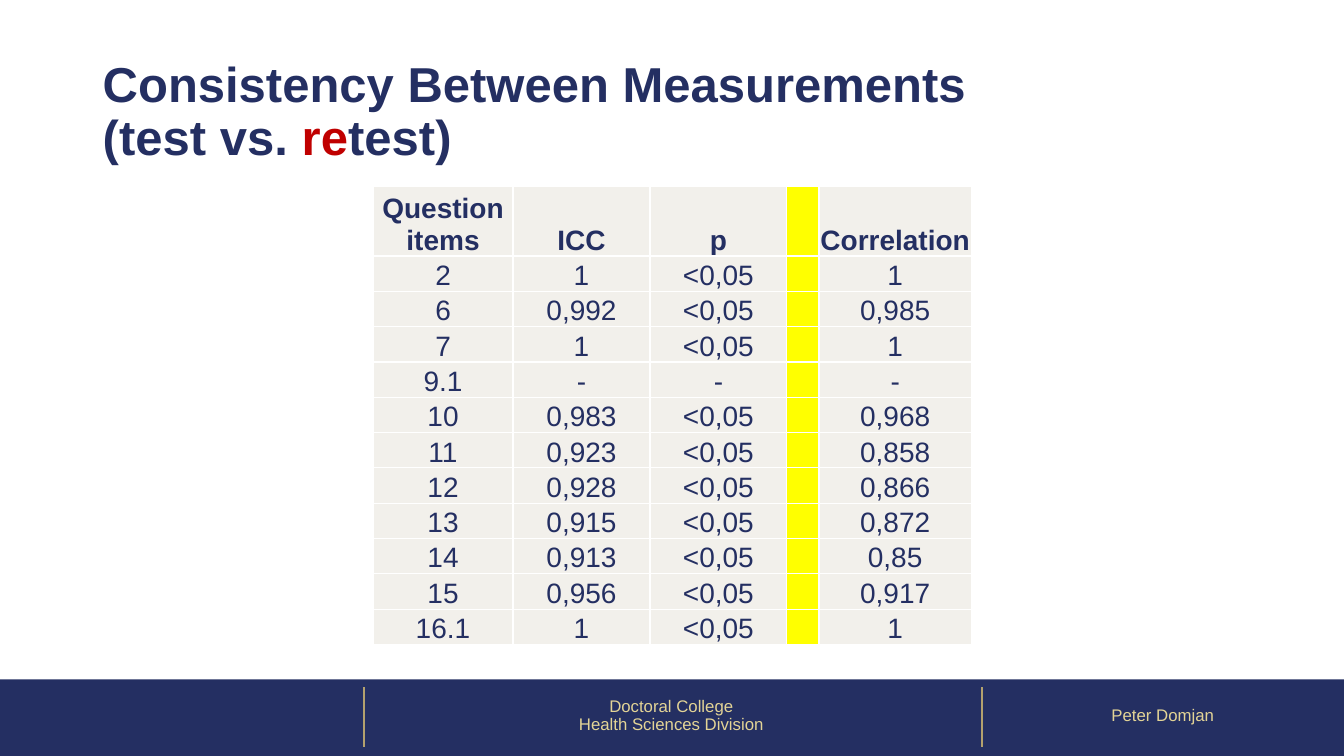
from lxml import etree
from pptx import Presentation
from pptx.dml.color import RGBColor
from pptx.enum.shapes import MSO_CONNECTOR, MSO_SHAPE
from pptx.enum.text import MSO_ANCHOR, PP_ALIGN
from pptx.oxml.ns import qn
from pptx.util import Cm, Pt

STRAIGHT = MSO_CONNECTOR.STRAIGHT
RECTANGLE = MSO_SHAPE.RECTANGLE
MIDDLE, BOTTOM = MSO_ANCHOR.MIDDLE, MSO_ANCHOR.BOTTOM
LEFT, CENTER = PP_ALIGN.LEFT, PP_ALIGN.CENTER

NAVY = RGBColor(0x24, 0x2F, 0x62)
GOLD = RGBColor(0xB3, 0xA1, 0x6E)
PALE_GOLD = RGBColor(0xE3, 0xD4, 0x96)
RED = RGBColor(0xC0, 0x00, 0x00)
CREAM = RGBColor(0xF2, 0xF0, 0xEB)
YELLOW = RGBColor(0xFF, 0xFF, 0x00)
WHITE = RGBColor(0xFF, 0xFF, 0xFF)


def format_paragraph(paragraph, size, color, bold, alignment):
    paragraph.alignment = alignment
    for run in paragraph.runs:
        run.font.name = "Arial"
        run.font.size = Pt(size)
        run.font.bold = bold
        run.font.color.rgb = color


def add_text_area(left, top, width, height):
    text_box = slide.shapes.add_textbox(Cm(left), Cm(top), Cm(width), Cm(height))
    text_box.text_frame.word_wrap = True
    text_box.text_frame.vertical_anchor = MIDDLE
    return text_box.text_frame


presentation = Presentation()
presentation.slide_width = Cm(33.87)
presentation.slide_height = Cm(19.05)
slide = presentation.slides.add_slide(presentation.slide_layouts[6])

# Footer band with two dividers
band = slide.shapes.add_shape(RECTANGLE, Cm(0), Cm(17.12), Cm(33.87), Cm(1.93))
band.shadow.inherit = False
band.fill.solid()
band.fill.fore_color.rgb = NAVY
band.line.fill.background()

for x in (9.17, 24.74):
    divider = slide.shapes.add_connector(STRAIGHT, Cm(x), Cm(17.32), Cm(x), Cm(18.82))
    divider.line.color.rgb = GOLD
    divider.line.width = Pt(1.5)
    etree.SubElement(divider._element.spPr, qn("a:effectLst"))

# Footer texts
for left, width, text in (
    (9.12, 15.6, "Doctoral College\nHealth Sciences Division"),
    (24.74, 9.13, "Peter Domjan"),
):
    text_frame = add_text_area(left, 17.04, width, 2.01)
    text_frame.text = text
    for paragraph in text_frame.paragraphs:
        paragraph.line_spacing = 0.9
        format_paragraph(paragraph, 12, PALE_GOLD, False, CENTER)

# Title
title = add_text_area(2.34, 1.02, 29.21, 3.68).paragraphs[0]
title.line_spacing = 0.9
title.add_run().text = "Consistency Between Measurements"
title.add_line_break()
for text in ("(test vs. ", "re", "test)"):
    title.add_run().text = text
format_paragraph(title, 35, NAVY, True, LEFT)
title.runs[2].font.color.rgb = RED

# Table of test-retest results
HEADER = ("Question items", "ICC", "p", "", "Correlation")
RESULTS = (
    ("2", "1", "<0,05", "1"),
    ("6", "0,992", "<0,05", "0,985"),
    ("7", "1", "<0,05", "1"),
    ("9.1", "-", "-", "-"),
    ("10", "0,983", "<0,05", "0,968"),
    ("11", "0,923", "<0,05", "0,858"),
    ("12", "0,928", "<0,05", "0,866"),
    ("13", "0,915", "<0,05", "0,872"),
    ("14", "0,913", "<0,05", "0,85"),
    ("15", "0,956", "<0,05", "0,917"),
    ("16.1", "1", "<0,05", "1"),
)
COLUMN_WIDTHS = (3.53, 3.45, 3.45, 0.81, 3.84)
HEADER_HEIGHT, ROW_HEIGHT = 1.75, 0.89
SEPARATOR_COLUMN = 3

rows = [HEADER] + [(item, icc, p, "", correlation) for item, icc, p, correlation in RESULTS]
table = slide.shapes.add_table(
    len(rows), len(HEADER), Cm(9.4), Cm(4.7),
    Cm(sum(COLUMN_WIDTHS)), Cm(HEADER_HEIGHT + ROW_HEIGHT * len(RESULTS)),
).table
for column, width in zip(table.columns, COLUMN_WIDTHS):
    column.width = Cm(width)

for row_index, values in enumerate(rows):
    is_header = row_index == 0
    table.rows[row_index].height = Cm(HEADER_HEIGHT if is_header else ROW_HEIGHT)
    for column_index, value in enumerate(values):
        cell = table.cell(row_index, column_index)
        cell.margin_left = cell.margin_right = cell.margin_top = Cm(0.02)
        cell.margin_bottom = Cm(0)
        cell.vertical_anchor = BOTTOM
        cell.text_frame.text = value
        format_paragraph(cell.text_frame.paragraphs[0], 20, NAVY, is_header, CENTER)

        # Thin white borders, which come before the fill in the cell properties
        properties = cell._tc.get_or_add_tcPr()
        for side in ("a:lnL", "a:lnR", "a:lnT", "a:lnB"):
            border = etree.SubElement(properties, qn(side), w=str(Pt(1)))
            border_fill = etree.SubElement(border, qn("a:solidFill"))
            etree.SubElement(border_fill, qn("a:srgbClr"), val=str(WHITE))
        cell.fill.solid()
        cell.fill.fore_color.rgb = YELLOW if column_index == SEPARATOR_COLUMN else CREAM

presentation.save("out.pptx")
